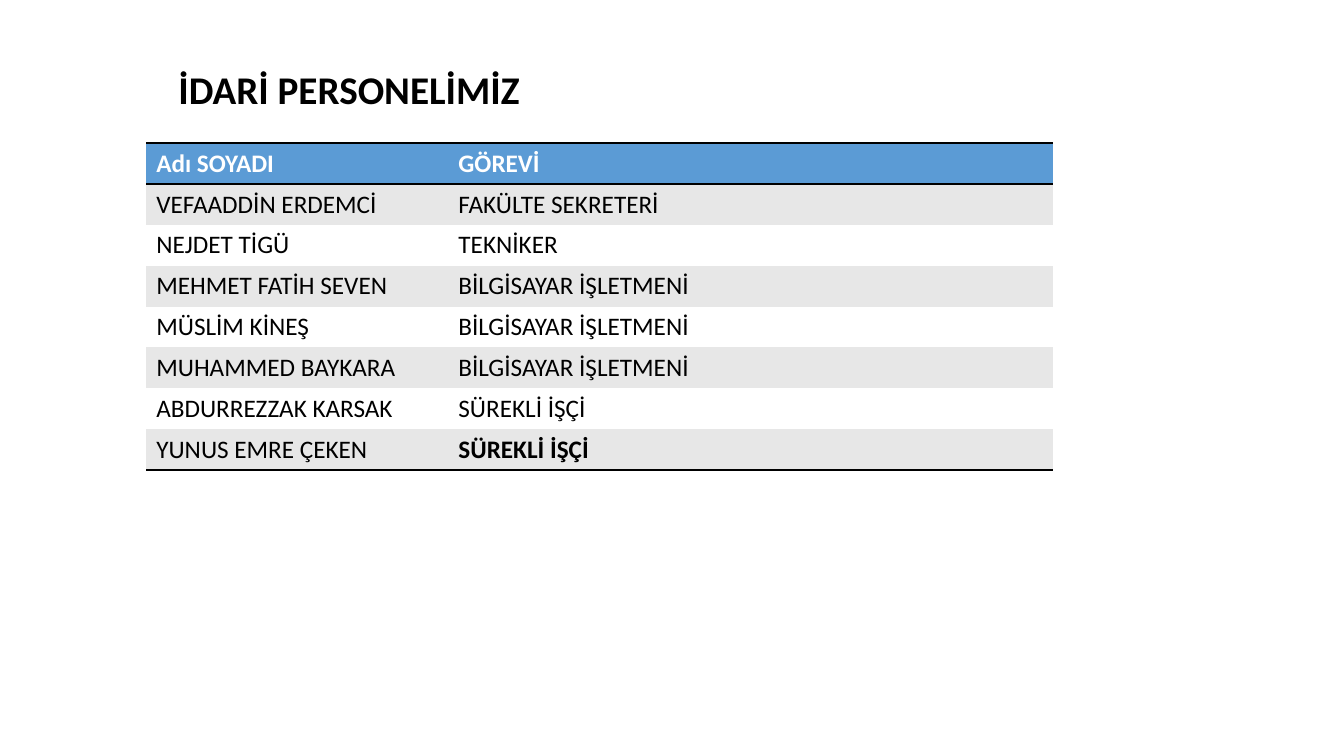
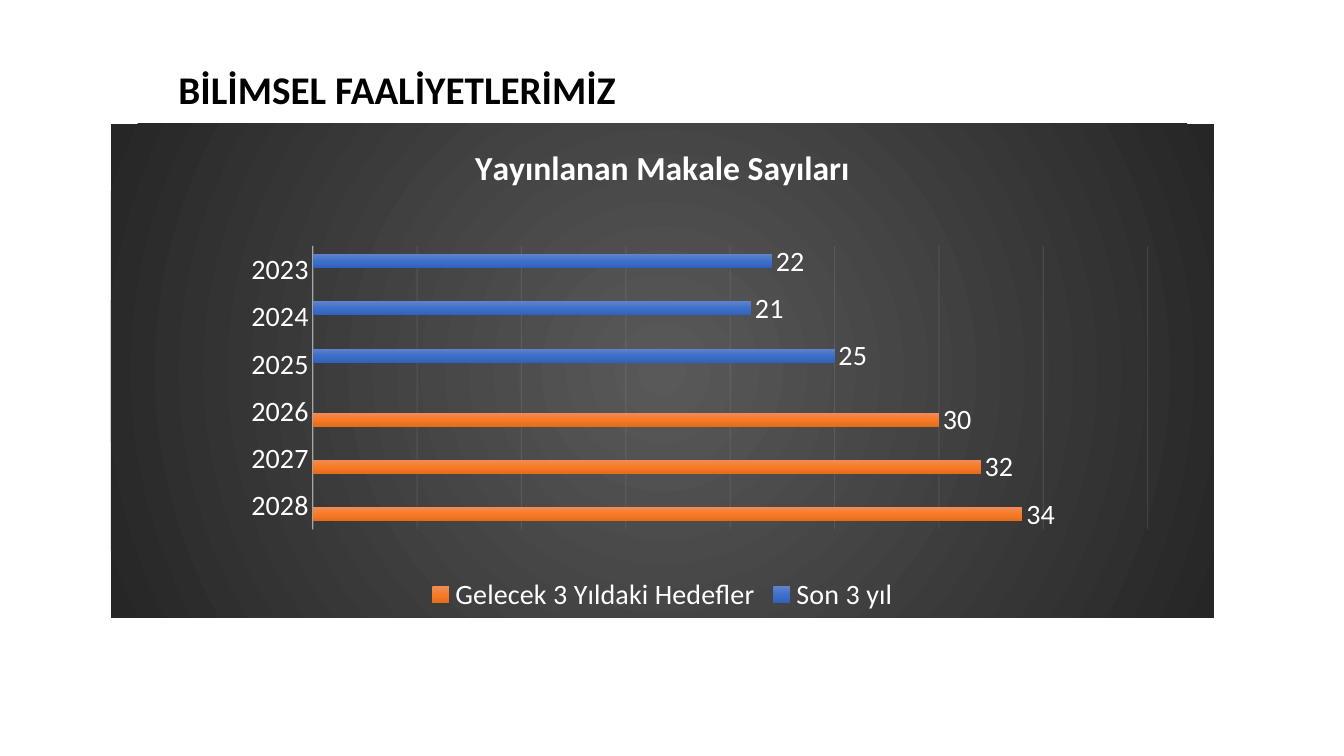
from pptx import Presentation
from pptx.chart.data import CategoryChartData
from pptx.dml.color import RGBColor
from pptx.enum.chart import (XL_CHART_TYPE as ChartType, XL_LABEL_POSITION as LabelPosition,
                             XL_LEGEND_POSITION as LegendPosition,
                             XL_TICK_LABEL_POSITION as TickLabels, XL_TICK_MARK as TickMark)
from pptx.enum.text import MSO_ANCHOR as Anchor, MSO_AUTO_SIZE as AutoSize, PP_ALIGN as Align
from pptx.oxml import parse_xml
from pptx.oxml.ns import nsdecls, qn
from pptx.util import Inches, Pt

FONT = "Calibri"
COLORS = {
    "text": "000000", "light": "FFFFFF", "header": "5B9BD5", "band": "E7E7E7",
    "axis": "F2F2F2", "panel_center": "595959", "panel_edge": "262626",
}
BLUES = [(0, "6183CB"), (50, "3E70CA"), (100, "3062BB")]
ORANGES = [(0, "F18C57"), (50, "F67B28"), (100, "E56C19")]
WIDTH, HEIGHT = Inches(13.333), Inches(7.5)
NO_TABLE_STYLE = "{2D5ABB26-0587-4C30-8999-92F81FD0307C}"

# Boxes are left, top, width and height in percent of the slide.
TITLE_BOX = (12.53, 5.33, 60.6, 13.6)
TABLE_BOX = (10.88, 18.93, 67.44, 43)
CHART_BOX = (8.25, 16.4, 82.07, 65.33)
PLOT_BOX = (18.3, 24.7, 75.7, 57.4)  # percent of the chart

STAFF = [
    ("Adı SOYADI", "GÖREVİ"),
    ("VEFAADDİN ERDEMCİ", "FAKÜLTE SEKRETERİ"),
    ("NEJDET TİGÜ", "TEKNİKER"),
    ("MEHMET FATİH SEVEN", "BİLGİSAYAR İŞLETMENİ"),
    ("MÜSLİM KİNEŞ", "BİLGİSAYAR İŞLETMENİ"),
    ("MUHAMMED BAYKARA", "BİLGİSAYAR İŞLETMENİ"),
    ("ABDURREZZAK KARSAK", "SÜREKLİ İŞÇİ"),
    ("YUNUS EMRE ÇEKEN", "SÜREKLİ İŞÇİ"),
]
YEARS = ["2023", "2024", "2025", "2026", "2027", "2028"]
ARTICLES = [
    ("Son 3 yıl", (22, 21, 25, None, None, None), BLUES),
    ("Gelecek 3 Yıldaki Hedefler", (None, None, None, 30, 32, 34), ORANGES),
]


def rgb(name):
    return RGBColor.from_string(COLORS[name])


def on_slide(box):
    """Turn a box in percent into slide lengths."""
    left, top, width, height = box
    return (int(WIDTH * left / 100), int(HEIGHT * top / 100),
            int(WIDTH * width / 100), int(HEIGHT * height / 100))


def style_font(font, size, color, bold=False):
    font.name, font.size, font.bold = FONT, Pt(size), bold
    font.color.rgb = rgb(color)


def write(para, text, size, color, bold=False):
    span = para.add_run()
    span.text = text
    style_font(span.font, size, color, bold)


def gradient(stops, direction):
    """Build a gradient fill from (percent, hex) stops and a direction element."""
    marks = "".join(f'<a:gs pos="{position * 1000}"><a:srgbClr val="{color}"/></a:gs>'
                    for position, color in stops)
    return parse_xml(f'<a:gradFill {nsdecls("a")} rotWithShape="1">'
                     f'<a:gsLst>{marks}</a:gsLst>{direction}</a:gradFill>')


def faint_line(line, width, opacity):
    line.width = Pt(width)
    line.color.rgb = rgb("axis")
    color = line._get_or_add_ln().find(".//" + qn("a:srgbClr"))
    color.append(parse_xml(f'<a:alpha {nsdecls("a")} val="{opacity * 1000}"/>'))


def add_page(deck, title):
    page = deck.slides.add_slide(deck.slide_layouts.get_by_name("Title Only"))
    heading = page.shapes.title
    heading.left, heading.top, heading.width, heading.height = on_slide(TITLE_BOX)
    frame = heading.text_frame
    frame.auto_size, frame.vertical_anchor = AutoSize.NONE, Anchor.MIDDLE
    para = frame.paragraphs[0]
    para.alignment, para.line_spacing = Align.LEFT, 0.9
    write(para, title, 28, "text", bold=True)
    return page


def rule_cell(cell, sides):
    """Draw black rules on the given sides, listed top before bottom."""
    for index, side in enumerate(sides):
        cell._tc.get_or_add_tcPr().insert(index, parse_xml(
            f'<a:ln{side} {nsdecls("a")} w="{Pt(2)}"><a:solidFill>'
            f'<a:srgbClr val="{COLORS["text"]}"/></a:solidFill></a:ln{side}>'))


def add_staff_table(page, box):
    left, top, width, height = on_slide(box)
    last = len(STAFF) - 1
    table = page.shapes.add_table(len(STAFF), 2, left, top, width, height).table
    table._tbl.tblPr.find(qn("a:tableStyleId")).text = NO_TABLE_STYLE
    for column, share in zip(table.columns, (1, 2)):
        column.width = width * share // 3
    for row, values in enumerate(STAFF):
        is_header = row == 0
        fill = "header" if is_header else "band" if row % 2 else "light"
        for column, value in enumerate(values):
            cell = table.cell(row, column)
            bold = is_header or (row, column) == (last, 1)
            write(cell.text_frame.paragraphs[0], value, 18,
                  "light" if is_header else "text", bold)
            cell.fill.solid()
            cell.fill.fore_color.rgb = rgb(fill)
            rule_cell(cell, "TB" if is_header else "B" if row == last else "")


def paint_panel(chart):
    panel = parse_xml(f'<c:spPr {nsdecls("c", "a")}><a:ln><a:noFill/></a:ln></c:spPr>')
    panel.insert(0, gradient(
        [(0, COLORS["panel_center"]), (100, COLORS["panel_edge"])],
        '<a:path path="circle"><a:fillToRect l="50000" t="50000" r="50000" b="50000"/></a:path>'))
    chart._chartSpace.find(qn("c:chart")).addnext(panel)


def place_plot(chart, box):
    area = chart._chartSpace.find(".//" + qn("c:plotArea"))
    for layout in area.findall(qn("c:layout")):
        area.remove(layout)
    sizes = "".join(f'<c:{key} val="{value / 100}"/>' for key, value in zip("xywh", box))
    area.insert(0, parse_xml(
        f'<c:layout {nsdecls("c")}><c:manualLayout><c:layoutTarget val="inner"/>'
        f'<c:xMode val="edge"/><c:yMode val="edge"/>{sizes}</c:manualLayout></c:layout>'))


def style_axes(chart):
    years, counts = chart.category_axis, chart.value_axis
    years.reverse_order = True
    years.major_tick_mark = years.minor_tick_mark = TickMark.NONE
    years.tick_label_position = TickLabels.NEXT_TO_AXIS
    faint_line(years.format.line, 1, 54)
    counts.minimum_scale, counts.maximum_scale, counts.major_unit = 0, 40, 5
    counts.has_major_gridlines = True
    faint_line(counts.major_gridlines.format.line, 0.75, 10)
    counts.visible = False


def style_bars(plot):
    plot.vary_by_categories = False
    plot.gap_width, plot.overlap = 115, -20
    for series, (_, _, stops) in zip(plot.series, ARTICLES):
        series.invert_if_negative = False
        series._element.get_or_add_spPr().insert(
            0, gradient(stops, '<a:lin ang="5400000" scaled="0"/>'))
        labels = series.data_labels
        labels.show_value, labels.position = True, LabelPosition.OUTSIDE_END
        style_font(labels.font, 20, "light")


def add_article_chart(page, box):
    data = CategoryChartData()
    data.categories = YEARS
    for name, values, _ in ARTICLES:
        data.add_series(name, values)
    chart = page.shapes.add_chart(ChartType.BAR_CLUSTERED, *on_slide(box), data).chart
    style_font(chart.font, 20, "light")
    chart.has_title = True
    write(chart.chart_title.text_frame.paragraphs[0], "Yayınlanan Makale Sayıları",
          24, "light", bold=True)
    chart.has_legend = True
    chart.legend.position = LegendPosition.BOTTOM
    chart.legend.include_in_layout = False
    paint_panel(chart)
    place_plot(chart, PLOT_BOX)
    style_axes(chart)
    style_bars(chart.plots[0])


def main():
    deck = Presentation()
    deck.slide_width, deck.slide_height = WIDTH, HEIGHT
    add_staff_table(add_page(deck, "İDARİ PERSONELİMİZ"), TABLE_BOX)
    add_article_chart(add_page(deck, "BİLİMSEL FAALİYETLERİMİZ"), CHART_BOX)
    deck.save("out.pptx")


if __name__ == "__main__":
    main()
